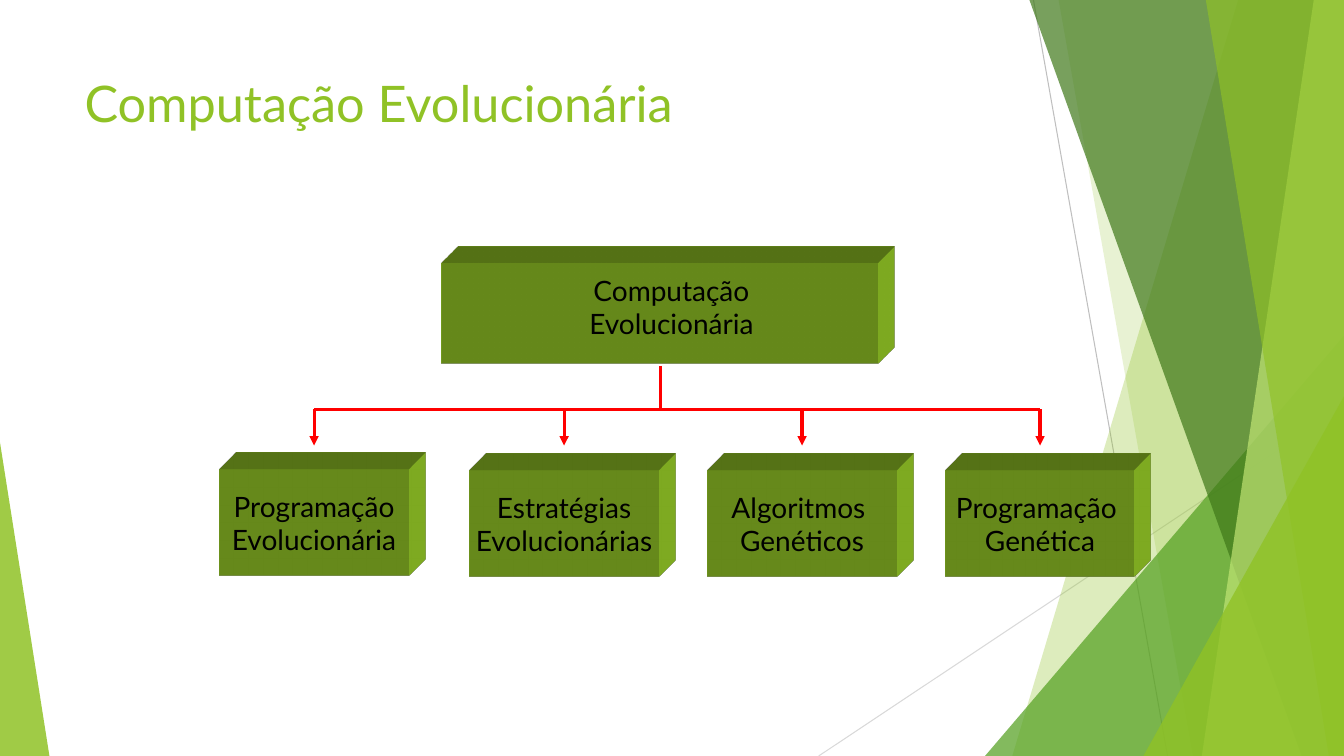
from lxml import etree
from pptx import Presentation
from pptx import util as u
from pptx.dml import color
from pptx.enum import shapes, text
from pptx.oxml import ns

COLORS = {
    "lime": "90C226", "green": "54A021", "forest": "3F7819", "pale": "C0E474",
    "gray": "BFBFBF", "silver": "D9D9D9", "red": "FF0000", "black": "000000",
}
FONT = "Lato"
WIDTH, HEIGHT = 13.33, 7.5
BRANCH_Y = 4.06
BRANCHES = [
    (2.18, 4.66, "Programação\nEvolucionária"),
    (4.66, 4.67, "Estratégias\nEvolucionárias"),
    (7.02, 4.67, "Algoritmos \nGenéticos"),
    (9.38, 4.67, "Programação \nGenética"),
]
BRANCH_WIDTH, BRANCH_HEIGHT = 1.87, 1.05
RIBBONS = [
    (12.28, 10.04, "lime", 30),
    (10.5, 11.83, "lime", 20),
    (9.77, 3.33, 3.56, 4.17, 1, "green", 72),
    (10.21, 12.91, "forest", 70),
    (13.03, 11.92, "pale", 70),
    (11.96, 13.18, "lime", 65),
    (11.34, 3.93, 1.99, 3.57, 1, "lime", 80),
    (0, 4.39, 0.49, 3.11, 0, "lime", 85),
]


def rgb(name):
    return color.RGBColor.from_string(COLORS[name])


def add_xml(parent, tag, **attributes):
    child = etree.SubElement(parent, ns.qn(tag))
    for key, value in attributes.items():
        child.set(key, str(value))
    return child


def paint(shape, fill, opacity=100):
    shape.shadow.inherit = False
    shape.fill.solid()
    shape.fill.fore_color.rgb = rgb(fill)
    shape.line.fill.background()
    if opacity < 100:
        tint = shape.fill._xPr.find(".//" + ns.qn("a:srgbClr"))
        add_xml(tint, "a:alpha", val=opacity * 1000)


def add_preset(slide, kind, *box):
    return slide.shapes.add_shape(kind, *map(u.Inches, box))


def add_band(slide, top_x, bottom_x, fill, opacity):
    corners = [(WIDTH, 0), (WIDTH, HEIGHT), (bottom_x, HEIGHT)]
    builder = slide.shapes.build_freeform(u.Inches(top_x), 0)
    builder.add_line_segments([tuple(map(u.Inches, corner)) for corner in corners])
    paint(builder.convert_to_shape(), fill, opacity)


def add_corner(slide, left, top, width, height, apex, fill, opacity):
    corner = add_preset(slide, shapes.MSO_SHAPE.ISOSCELES_TRIANGLE, left, top, width, height)
    corner.adjustments[0] = apex
    paint(corner, fill, opacity)


def add_line(slide, start, end, stroke, weight, arrow=False):
    line = slide.shapes.add_connector(
        shapes.MSO_CONNECTOR.STRAIGHT, *map(u.Inches, start + end))
    line.line.color.rgb = rgb(stroke)
    line.line.width = u.Pt(weight)
    if arrow:
        add_xml(line.line._get_or_add_ln(), "a:tailEnd", type="triangle")
    add_xml(line._element.spPr, "a:effectLst")


def write(frame, wording, size, ink, align, **format_values):
    for key, value in format_values.items():
        setattr(frame, key, value)
    frame.text = wording
    for paragraph in frame.paragraphs:
        paragraph.alignment = align
        formats = {"name": FONT, "size": u.Pt(size)}
        for key, value in formats.items():
            setattr(paragraph.font, key, value)
        paragraph.font.color.rgb = rgb(ink)


def add_label(slide, box, wording, size, ink, align):
    label = slide.shapes.add_textbox(*map(u.Inches, box))
    write(label.text_frame, wording, size, ink, align, word_wrap=True)


def add_block(slide, *box):
    block = add_preset(slide, shapes.MSO_SHAPE.RECTANGLE, *box)
    paint(block, "lime")
    scene = add_xml(block._element.spPr, "a:scene3d")
    add_xml(scene, "a:camera", prst="legacyObliqueTopRight")
    add_xml(scene, "a:lightRig", rig="legacyFlat3", dir="b")
    solid = add_xml(block._element.spPr, "a:sp3d",
                    extrusionH=430200, prstMaterial="legacyMatte")
    for bevel in ("a:bevelT", "a:bevelB"):
        add_xml(solid, bevel, w=13500, h=13500, prst="angle")
    add_xml(add_xml(solid, "a:extrusionClr"), "a:srgbClr", val=COLORS["lime"])
    return block


def add_background(slide):
    add_line(slide, (10.25, 0), (11.58, HEIGHT), "gray", 0.75)
    add_line(slide, (WIDTH, 4.03), (8.12, HEIGHT), "silver", 0.75)
    for ribbon in RIBBONS:
        draw = add_band if len(ribbon) == 4 else add_corner
        draw(slide, *ribbon)


def add_tree(slide):
    center = text.PP_ALIGN.CENTER
    add_block(slide, 4.38, 2.61, 4.33, 1)
    add_label(slide, (5.16, 2.66, 3, 0.77), "Computação Evolucionária", 20, "black", center)
    for left, top, wording in BRANCHES:
        block = add_block(slide, left, top, BRANCH_WIDTH, BRANCH_HEIGHT)
        write(block.text_frame, wording, 20, "black", center,
              word_wrap=False, vertical_anchor=text.MSO_ANCHOR.MIDDLE)
    stems = [left + BRANCH_WIDTH / 2 for left, _, _ in BRANCHES]
    add_line(slide, (stems[-1], BRANCH_Y), (stems[0], BRANCH_Y), "red", 2.25)
    for stem in stems:
        add_line(slide, (stem, BRANCH_Y), (stem, 4.42), "red", 2.25, arrow=True)
    add_line(slide, (6.55, 3.63), (6.55, BRANCH_Y), "red", 2.25)


def main():
    deck = Presentation()
    deck.slide_width, deck.slide_height = u.Inches(WIDTH), u.Inches(HEIGHT)
    slide = deck.slides.add_slide(deck.slide_layouts[6])
    add_background(slide)
    add_label(slide, (0.74, 0.67, 9.4, 1.44), "Computação Evolucionária",
              36, "lime", text.PP_ALIGN.LEFT)
    add_tree(slide)
    deck.save("out.pptx")


if __name__ == "__main__":
    main()
